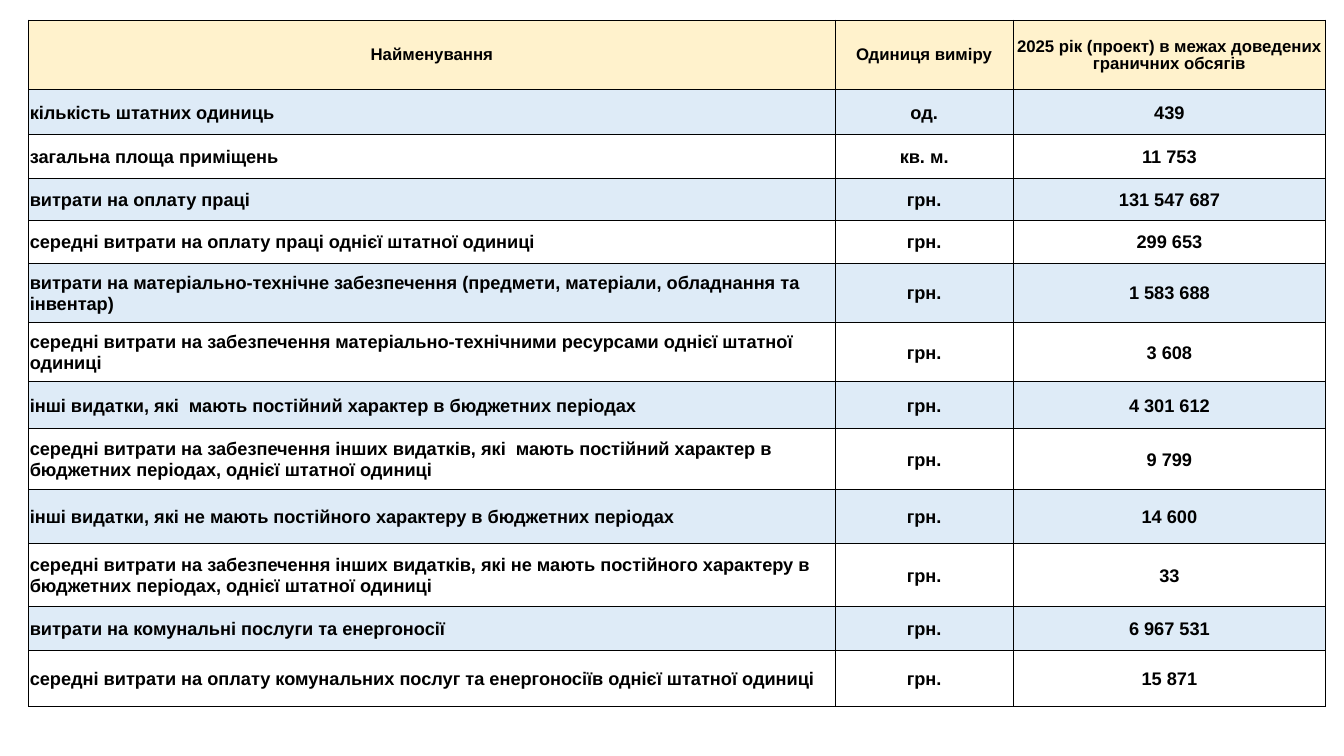
from lxml import etree
from pptx import Presentation
from pptx.dml.color import RGBColor
from pptx.enum.text import MSO_ANCHOR, PP_ALIGN
from pptx.oxml.ns import qn
from pptx.util import Cm, Pt

LEFT, MID = PP_ALIGN.LEFT, PP_ALIGN.CENTER
ANCHOR = MSO_ANCHOR.MIDDLE

HUES = {"head": "FFF2CC", "band": "DEEBF7", "plain": "FFFFFF", "ink": "000000"}
COLS = [20.33, 4.48, 7.88]
HEIGHTS = [1.75, 1.13, 1.11, 1.06, 1.08, 1.49, 1.49, 1.18, 1.54, 1.36, 1.59, 1.11, 1.39]
INSETS = {
    "margin_left": Cm(0.03),
    "margin_top": Cm(0.03),
    "margin_right": Cm(0.03),
    "margin_bottom": Cm(0),
    "vertical_anchor": ANCHOR,
}
HEAD = {"name": "Arial", "size": Pt(12), "bold": True}
BODY = {**HEAD, "size": Pt(13)}

ROWS = [
    ("Найменування", "Одиниця виміру", "2025 рік (проект) в межах доведених граничних обсягів"),
    ("кількість штатних одиниць", "од.", "439"),
    ("загальна площа приміщень", "кв. м.", "11 753"),
    ("витрати на оплату праці", "грн.", "131 547 687"),
    ("середні витрати на оплату праці однієї штатної одиниці", "грн.", "299 653"),
    ("витрати на матеріально-технічне забезпечення (предмети, матеріали, обладнання та інвентар)",
     "грн.", "1 583 688"),
    ("середні витрати на забезпечення матеріально-технічними ресурсами однієї штатної одиниці",
     "грн.", "3 608"),
    ("інші видатки, які  мають постійний характер в бюджетних періодах", "грн.", "4 301 612"),
    ("середні витрати на забезпечення інших видатків, які  мають постійний характер в "
     "бюджетних періодах, однієї штатної одиниці", "грн.", "9 799"),
    ("інші видатки, які не мають постійного характеру в бюджетних періодах", "грн.", "14 600"),
    ("середні витрати на забезпечення інших видатків, які не мають постійного характеру в "
     "бюджетних періодах, однієї штатної одиниці", "грн.", "33"),
    ("витрати на комунальні послуги та енергоносії", "грн.", "6 967 531"),
    ("середні витрати на оплату комунальних послуг та енергоносіїв однієї штатної одиниці",
     "грн.", "15 871"),
]


def apply(item, props):
    for key, value in props.items():
        setattr(item, key, value)


def edge(cell, top):
    props = cell._tc.get_or_add_tcPr()
    widths = {"a:lnL": 0.5, "a:lnR": 0.5, "a:lnT": top, "a:lnB": 0.5}
    for place, (tag, width) in enumerate(widths.items()):
        line = etree.Element(qn(tag), w=str(Pt(width)))
        fill = etree.SubElement(line, qn("a:solidFill"))
        etree.SubElement(fill, qn("a:srgbClr"), val=HUES["ink"])
        props.insert(place, line)


def fill_cell(cell, text, hue, font, align, top):
    apply(cell, INSETS)
    cell.fill.solid()
    cell.fill.fore_color.rgb = RGBColor.from_string(HUES[hue])
    edge(cell, top)
    para = cell.text_frame.paragraphs[0]
    para.alignment = align
    run = para.add_run()
    run.text = text
    apply(run.font, font)
    run.font.color.rgb = RGBColor.from_string(HUES["ink"])
    return para


def budget_table(slide, left, top, width, height):
    frame = slide.shapes.add_table(
        len(ROWS), len(COLS), Cm(left), Cm(top), Cm(width), Cm(height))
    table = frame.table
    apply(table, {"first_row": False, "horz_banding": False})
    for col, size in zip(table.columns, COLS):
        col.width = Cm(width * size / sum(COLS))
    for row, size in zip(table.rows, HEIGHTS):
        row.height = Cm(height * size / sum(HEIGHTS))
    for r, texts in enumerate(ROWS):
        hue = "head" if r == 0 else "band" if r % 2 else "plain"
        for c, text in enumerate(texts):
            align = LEFT if r and c == 0 else MID
            para = fill_cell(table.cell(r, c), text, hue, BODY if r else HEAD,
                             align, 0.5 if r else 1)
            if r == 0:
                para.line_spacing = 0.9


def main():
    deck = Presentation()
    apply(deck, {"slide_width": Cm(33.87), "slide_height": Cm(19.05)})
    slide = deck.slides.add_slide(deck.slide_layouts[6])
    budget_table(slide, 0.72, 0.51, sum(COLS), sum(HEIGHTS))
    deck.save("out.pptx")


if __name__ == "__main__":
    main()
